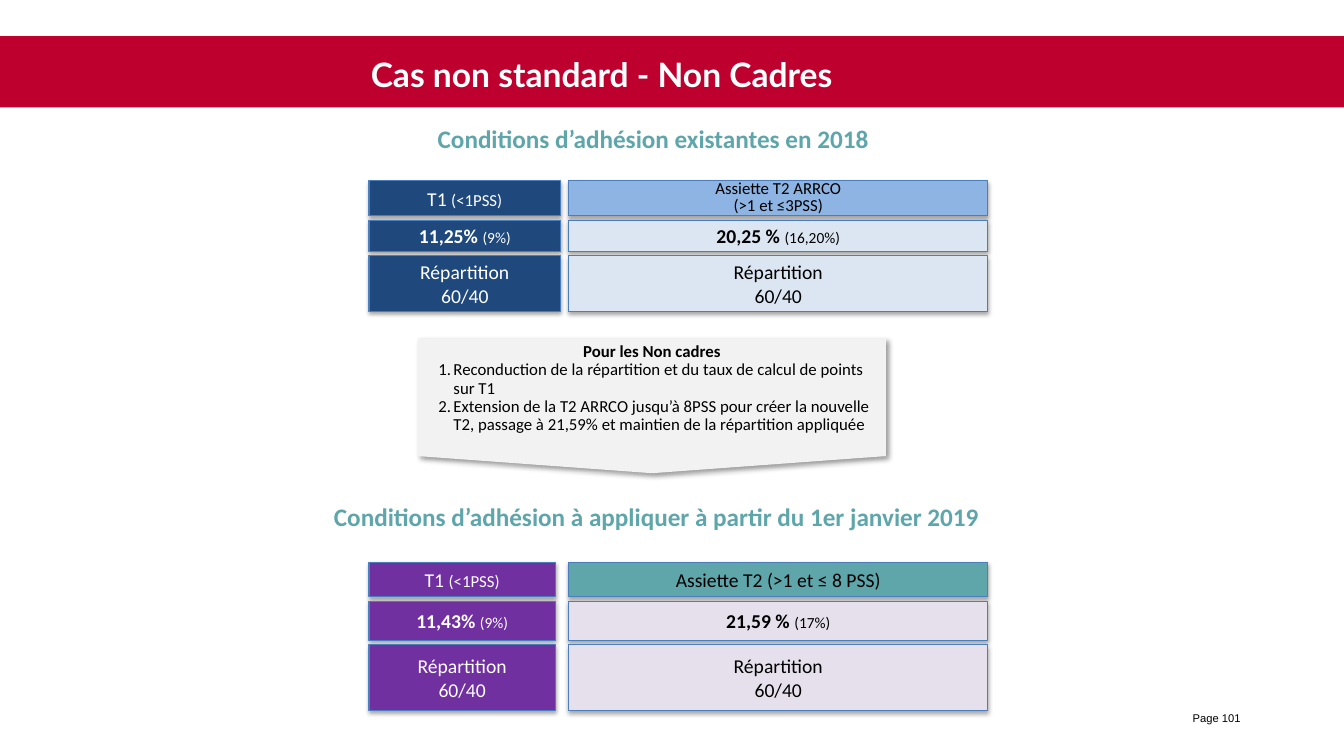
from lxml import etree
from pptx import Presentation
from pptx.dml.color import RGBColor
from pptx.enum.shapes import MSO_SHAPE
from pptx.enum.text import MSO_ANCHOR, MSO_AUTO_SIZE, PP_ALIGN
from pptx.oxml.ns import qn
from pptx.util import Cm, Pt

RECTANGLE, ARROW = MSO_SHAPE.RECTANGLE, MSO_SHAPE.RIGHT_ARROW
LEFT, CENTER, RIGHT = PP_ALIGN.LEFT, PP_ALIGN.CENTER, PP_ALIGN.RIGHT
MIDDLE, TOP = MSO_ANCHOR.MIDDLE, MSO_ANCHOR.TOP
NO_AUTOFIT = MSO_AUTO_SIZE.NONE

WHITE = RGBColor(0xFF, 0xFF, 0xFF)
BLACK = RGBColor(0x00, 0x00, 0x00)
RED = RGBColor(0xBD, 0x00, 0x2E)
TEAL = RGBColor(0x5E, 0xA6, 0xAA)
NAVY = RGBColor(0x1F, 0x49, 0x7D)
BLUE = RGBColor(0x8E, 0xB4, 0xE3)
PALE_BLUE = RGBColor(0xDC, 0xE6, 0xF2)
PURPLE = RGBColor(0x70, 0x30, 0xA0)
PALE_PURPLE = RGBColor(0xE6, 0xE0, 0xEC)
GREY = RGBColor(0xF2, 0xF2, 0xF2)
BORDER = RGBColor(0x4B, 0x7E, 0xBC)

TITLE = "Cas non standard - Non Cadres"
PAGE = "Page 101"

# Headings: text, (left, top, width, height) in cm, line spacing
HEADINGS = [
    ("Conditions d’adhésion existantes en 2018 ", (8.79, 3.07, 15.49, 0.94), 0.9),
    ("Conditions d’adhésion à appliquer à partir du 1er janvier 2019",
     (6.2, 12.65, 20.7, 0.89), 0.8),
]

# A cell is a list of paragraphs, a paragraph a list of (text, size, bold) runs
T1 = [[("T1 ", 14, False), ("(<1PSS)", 12, False)]]
SPLIT = [[("Répartition", 14, False)], [("60/40", 14, False)]]
GRIDS = [
    {
        "top": 4.55, "heights": (0.89, 0.79, 1.4), "t1_width": 4.83, "inset": 0.25,
        "t1_fill": NAVY, "t2_fills": (BLUE, PALE_BLUE, PALE_BLUE),
        "t1": (T1, [[("11,25% ", 14, True), ("(9%)", 11, False)]], SPLIT),
        "t2": ([[("Assiette T2 ARRCO", 12, False)], [("(>1 et ≤3PSS)", 12, False)]],
               [[("20,25 % ", 14, True), ("(16,20%)", 11, False)]], SPLIT),
        "header_spacing": 0.8,
    },
    {
        "top": 14.17, "heights": (0.87, 0.99, 1.65), "t1_width": 4.7, "inset": 0.05,
        "t1_fill": PURPLE, "t2_fills": (TEAL, PALE_PURPLE, PALE_PURPLE),
        "t1": (T1, [[("11,43% ", 14, True), ("(9%)", 11, False)]], SPLIT),
        "t2": ([[("Assiette T2 (>1 et ≤ 8 PSS)", 14, False)]],
               [[("21,59 % ", 14, True), ("(17%)", 11, False)]], SPLIT),
        "header_spacing": 1.0,
    },
]
T1_LEFT, T2_LEFT, T2_WIDTH, ROW_GAP = 9.3, 14.33, 10.57, 0.11

NOTE_TITLE = "Pour les Non cadres"
NOTE_ITEMS = [
    "Reconduction de la répartition et du taux de calcul de points sur T1",
    "Extension de la T2 ARRCO jusqu’à 8PSS pour créer la nouvelle T2, "
    "passage à 21,59% et maintien de la répartition appliquée",
]


def set_font(font, size, color, bold=False, name="Calibri"):
    font.name, font.size, font.bold = name, Pt(size), bold
    font.color.rgb = color


def add_box(slide, kind, box, fill, border=None, shadow=None):
    """Shadow is (blur pt, distance pt, angle, opacity %)."""
    shape = slide.shapes.add_shape(kind, *map(Cm, box))
    shape.fill.solid()
    shape.fill.fore_color.rgb = fill
    if border is None:
        shape.line.fill.background()
    else:
        shape.line.color.rgb = border
        shape.line.width = Pt(0.75)
    shape.shadow.inherit = False
    if shadow:
        blur, distance, angle, opacity = shadow
        effects = shape._element.spPr.find(qn("a:effectLst"))
        outer = etree.SubElement(
            effects, qn("a:outerShdw"), blurRad=str(Pt(blur)), dist=str(Pt(distance)),
            dir=str(angle * 60000), rotWithShape="0")
        color = etree.SubElement(outer, qn("a:srgbClr"), val="000000")
        etree.SubElement(color, qn("a:alpha"), val=str(opacity * 1000))
    return shape


def add_label(slide, text, box, size, color, align, bold, name="Calibri", spacing=1.0):
    frame = slide.shapes.add_textbox(*map(Cm, box)).text_frame
    frame.word_wrap = True
    paragraph = frame.paragraphs[0]
    paragraph.text = text
    paragraph.alignment = align
    paragraph.line_spacing = spacing
    set_font(paragraph.font, size, color, bold, name)


def add_cell(slide, box, fill, color, content, inset, spacing):
    shape = add_box(slide, RECTANGLE, box, fill, BORDER, (3.1, 1.8, 90, 35))
    frame = shape.text_frame
    frame.vertical_anchor = MIDDLE
    frame.margin_left = frame.margin_right = Cm(inset)
    for index, runs in enumerate(content):
        paragraph = frame.add_paragraph() if index else frame.paragraphs[0]
        paragraph.alignment = CENTER
        paragraph.line_spacing = spacing
        set_font(paragraph.font, runs[0][1], color, runs[0][2])
        for text, size, bold in runs:
            run = paragraph.add_run()
            run.text = text
            if len(runs) > 1:
                run.font.size, run.font.bold = Pt(size), bold


def add_grid(slide, grid):
    top = grid["top"]
    for row, height in enumerate(grid["heights"]):
        spacing = 1.0 if row else grid["header_spacing"]
        add_cell(slide, (T1_LEFT, top, grid["t1_width"], height), grid["t1_fill"],
                 WHITE, grid["t1"][row], grid["inset"], 1.0)
        add_cell(slide, (T2_LEFT, top, T2_WIDTH, height), grid["t2_fills"][row],
                 BLACK, grid["t2"][row], grid["inset"], spacing)
        top += height + ROW_GAP


def add_note(slide):
    """Arrow turned to point down, with its text kept upright."""
    arrow = add_box(slide, ARROW, (14.73, 4.32, 3.4, 11.81), GREY, shadow=(4, 3, 45, 40))
    arrow.rotation = 90
    arrow.adjustments[0], arrow.adjustments[1] = 0.998, 0.127
    frame = arrow.text_frame
    frame.vertical_anchor = TOP
    frame._txBody.bodyPr.set("vert", "vert270")
    for index, text in enumerate([NOTE_TITLE, *NOTE_ITEMS]):
        paragraph = frame.add_paragraph() if index else frame.paragraphs[0]
        paragraph.text = text
        paragraph.alignment = LEFT if index else CENTER
        paragraph.line_spacing = 0.9
        properties = paragraph._p.get_or_add_pPr()
        properties.set("marL", str(Cm(0.64)))
        properties.set("indent", str(Cm(-0.38 if index else -0.64)))
        if index:
            etree.SubElement(properties, qn("a:buFont"), typeface="+mj-lt")
            etree.SubElement(properties, qn("a:buAutoNum"), type="arabicPeriod")
        set_font(paragraph.font, 12, BLACK, bold=index == 0)


def main():
    presentation = Presentation()
    presentation.slide_width, presentation.slide_height = Cm(33.87), Cm(19.05)
    slide = presentation.slides.add_slide(presentation.slide_layouts[5])

    add_box(slide, RECTANGLE, (0, 0.91, 33.87, 1.8), RED)
    title = slide.shapes.title
    slide.shapes._spTree.append(title._element)  # in front of the band
    title.left, title.top, title.width, title.height = map(Cm, (9.09, 1.07, 20.7, 1.6))
    frame = title.text_frame
    frame.text = TITLE
    frame.auto_size = NO_AUTOFIT
    frame.vertical_anchor = MIDDLE
    frame.paragraphs[0].alignment = LEFT
    set_font(frame.paragraphs[0].font, 24, WHITE, True, "Lato")

    add_label(slide, PAGE, (21.46, 17.8, 10.06, 0.61), 8, BLACK, RIGHT, False, "Arial")
    for grid in GRIDS:
        add_grid(slide, grid)
    for text, box, spacing in HEADINGS:
        add_label(slide, text, box, 18, TEAL, CENTER, True, spacing=spacing)
    add_note(slide)
    presentation.save("out.pptx")


if __name__ == "__main__":
    main()
